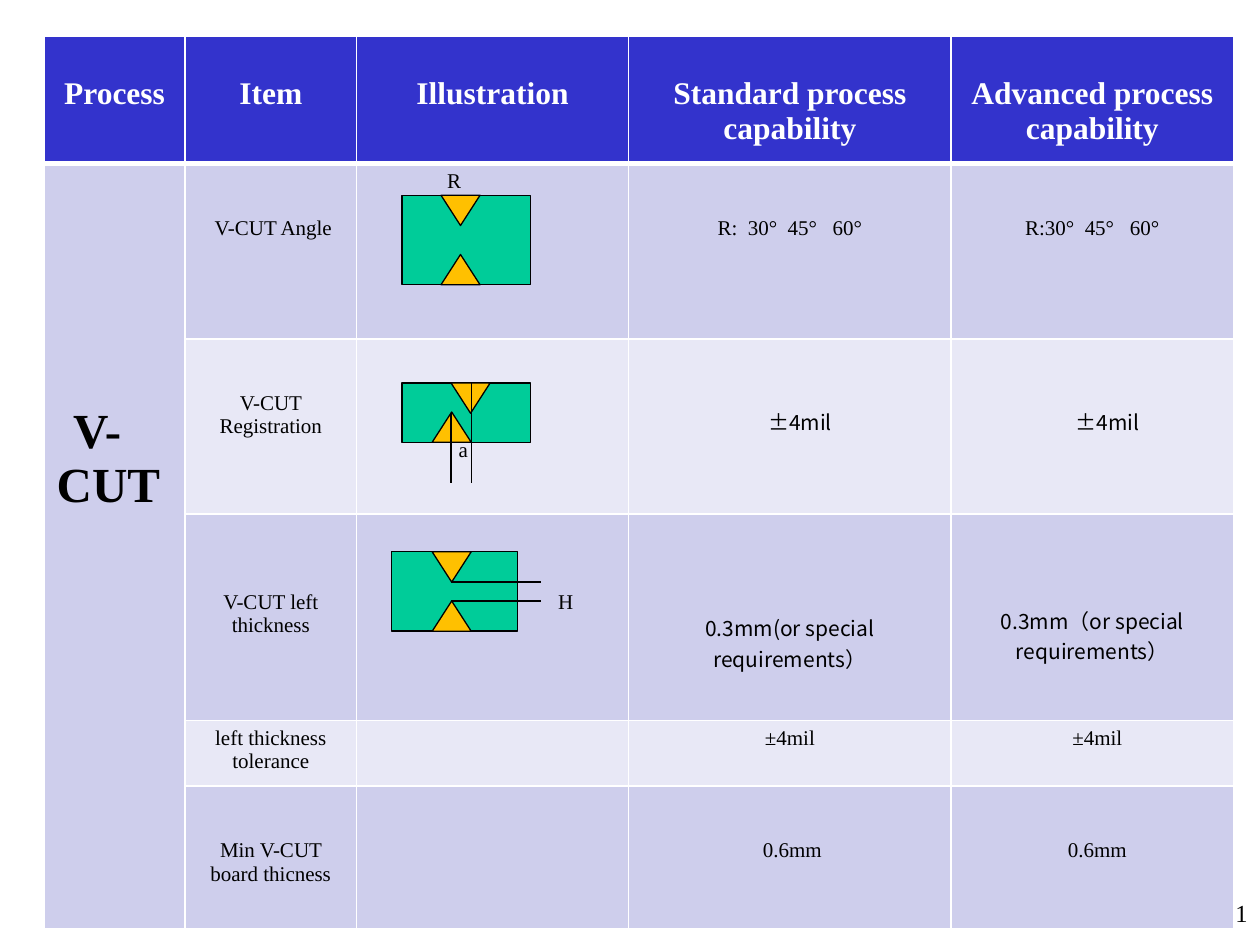
from dataclasses import dataclass
from lxml.etree import SubElement
from pptx import Presentation
from pptx.dml.color import RGBColor
from pptx.enum.shapes import MSO_CONNECTOR as Link, MSO_SHAPE as Shape
from pptx.enum.text import PP_ALIGN as Align
from pptx.oxml.ns import qn
from pptx.util import Inches, Pt


@dataclass(frozen=True)
class Theme:
    head: str = "3333CC"
    dark: str = "CECEEC"
    pale: str = "E8E8F6"
    white: str = "FFFFFF"
    ink: str = "000000"
    board: str = "00CC99"
    notch: str = "FFC000"
    serif: str = "Times New Roman"
    sans: str = "Noto Sans CJK SC"
    body: int = 12
    page: int = 14
    title: int = 18
    big: int = 28
    line: float = 0.75
    rule: float = 1
    thick: float = 3


T = Theme()
COLS = [1.12, 1.36, 2.16, 2.56, 2.24]
ROWS = [1.01, 1.39, 1.39, 1.64, 0.52, 1.13]
HEADS = ["Process", "Item", "Illustration",
         "Standard process capability", "Advanced process capability"]

# Per row: {column: (text, top margin, format)}
BODY = [
    {1: ("V-CUT Angle", 0.42, {"shift": 0.04}),
     2: ("R", 0.05, {"align": Align.LEFT, "shift": 0.62}),
     3: ("R:  30°  45°   60°", 0.42, {}),
     4: ("R:30°  45°   60°", 0.42, {})},
    {1: ("V-CUT Registration", 0.42, {}),
     2: ("a", 0.79, {"align": Align.LEFT, "shift": 0.71}),
     3: ("±4mil", 0.53, {"font": T.sans, "shift": 0.16}),
     4: ("±4mil", 0.53, {"font": T.sans, "shift": 0.24})},
    {1: ("V-CUT left thickness", 0.61, {}),
     2: ("H", 0.61, {"align": Align.LEFT, "shift": 1.5}),
     3: ("0.3mm(or special requirements）", 0.78, {"font": T.sans}),
     4: ("0.3mm（or special requirements）", 0.72, {"font": T.sans})},
    {1: ("left thickness tolerance", 0.05, {}),
     3: ("±4mil", 0.05, {}),
     4: ("±4mil", 0.05, {"shift": 0.08})},
    {1: ("Min V-CUT board thicness", 0.42, {}),
     3: ("0.6mm", 0.42, {"shift": 0.04}),
     4: ("0.6mm", 0.42, {"shift": 0.08})},
]


def rgb(code):
    return RGBColor.from_string(code)


def write(frame, text, size=T.body, font=T.serif, color=T.ink, bold=False,
          align=Align.CENTER, indent=0):
    frame.word_wrap = True
    para = frame.paragraphs[0]
    para.alignment = align
    if indent:
        para._p.get_or_add_pPr().set("indent", str(Inches(indent)))
    run = para.add_run()
    run.text = text
    face = run.font
    face.size, face.name, face.bold = Pt(size), font, bold
    face.color.rgb = rgb(color)
    SubElement(run._r.get_or_add_rPr(), qn("a:ea")).set("typeface", font)


def edge(cell, top=T.rule, base=T.rule):
    """Draw the four white borders of a cell."""
    sides = {"lnL": T.rule, "lnR": T.rule, "lnT": top, "lnB": base}
    for tag, width in sides.items():
        line = SubElement(cell._tc.get_or_add_tcPr(), qn(f"a:{tag}"),
                          w=str(Pt(width)))
        fill = SubElement(line, qn("a:solidFill"))
        SubElement(fill, qn("a:srgbClr"), val=T.white)


def fill_cell(cell, text, top, shift=0, **style):
    cell.margin_top = Inches(top)
    cell.margin_left = Inches(0.1 + shift)
    write(cell.text_frame, text, **style)


def add_grid(slide, left, top):
    box = [Inches(v) for v in (left, top, sum(COLS), sum(ROWS))]
    grid = slide.shapes.add_table(len(ROWS), len(COLS), *box).table
    for col, width in zip(grid.columns, COLS):
        col.width = Inches(width)
    for row, height in zip(grid.rows, ROWS):
        row.height = Inches(height)

    # Borders and banded fills
    for r in range(len(ROWS)):
        for c in range(len(COLS)):
            cell = grid.cell(r, c)
            edge(cell, T.thick if r == 1 else T.rule,
                 T.thick if r == 0 else T.rule)
            band = T.dark if r % 2 or c == 0 else T.pale
            cell.fill.solid()
            cell.fill.fore_color.rgb = rgb(band if r else T.head)

    # Heading row, merged process cell, then the body
    for c, text in enumerate(HEADS):
        fill_cell(grid.cell(0, c), text, 0.32, size=T.title,
                  color=T.white, bold=True)
    grid.cell(1, 0).merge(grid.cell(len(ROWS) - 1, 0))
    fill_cell(grid.cell(1, 0), "V-CUT", 1.91, size=T.big, bold=True,
              align=Align.LEFT, indent=0.13)
    for r, row in enumerate(BODY, 1):
        for c, (text, gap, style) in row.items():
            fill_cell(grid.cell(r, c), text, gap, **style)


def add_part(slide, kind, color, *box):
    part = slide.shapes.add_shape(kind, *[Inches(v) for v in box])
    part.shadow.inherit = False
    part.fill.solid()
    part.fill.fore_color.rgb = rgb(color)
    part.line.color.rgb = rgb(T.ink)
    part.line.width = Pt(T.line)


def add_board(slide, left, top, width, height, upper, lower):
    """Board with a notch in each face; upper and lower are notch offsets."""
    wide, deep = 0.31, 0.24
    add_part(slide, Shape.RECTANGLE, T.board, left, top, width, height)
    add_part(slide, Shape.FLOWCHART_MERGE, T.notch,
             left + upper, top, wide, deep)
    add_part(slide, Shape.ISOSCELES_TRIANGLE, T.notch,
             left + lower, top + height - deep, wide, deep)


def add_line(slide, *ends):
    line = slide.shapes.add_connector(
        Link.STRAIGHT, *[Inches(v) for v in ends])
    line.line.color.rgb = rgb(T.ink)
    line.line.width = Pt(T.line)
    SubElement(line._element.spPr, qn("a:effectLst"))


def add_art(slide):
    # Angle
    add_board(slide, 3.19, 1.55, 1.02, 0.71, upper=0.31, lower=0.31)
    # Registration
    add_board(slide, 3.19, 3.04, 1.02, 0.47, upper=0.39, lower=0.24)
    add_line(slide, 3.74, 3.04, 3.74, 3.83)
    add_line(slide, 3.58, 3.28, 3.58, 3.83)
    # Left thickness
    add_board(slide, 3.11, 4.38, 1, 0.63, upper=0.32, lower=0.32)
    for y in (4.62, 4.77):
        add_line(slide, 3.58, y, 4.29, y)


def add_page(slide, *box):
    note = slide.shapes.add_textbox(*[Inches(v) for v in box])
    write(note.text_frame, "1", size=T.page, align=Align.RIGHT)


def main():
    deck = Presentation()
    deck.slide_width, deck.slide_height = Inches(10), Inches(7.5)
    slide = deck.slides.add_slide(deck.slide_layouts[6])
    add_page(slide, 7.92, 7.08, 2.08, 0.42)
    add_grid(slide, 0.35, 0.29)
    add_art(slide)
    deck.save("out.pptx")


if __name__ == "__main__":
    main()
